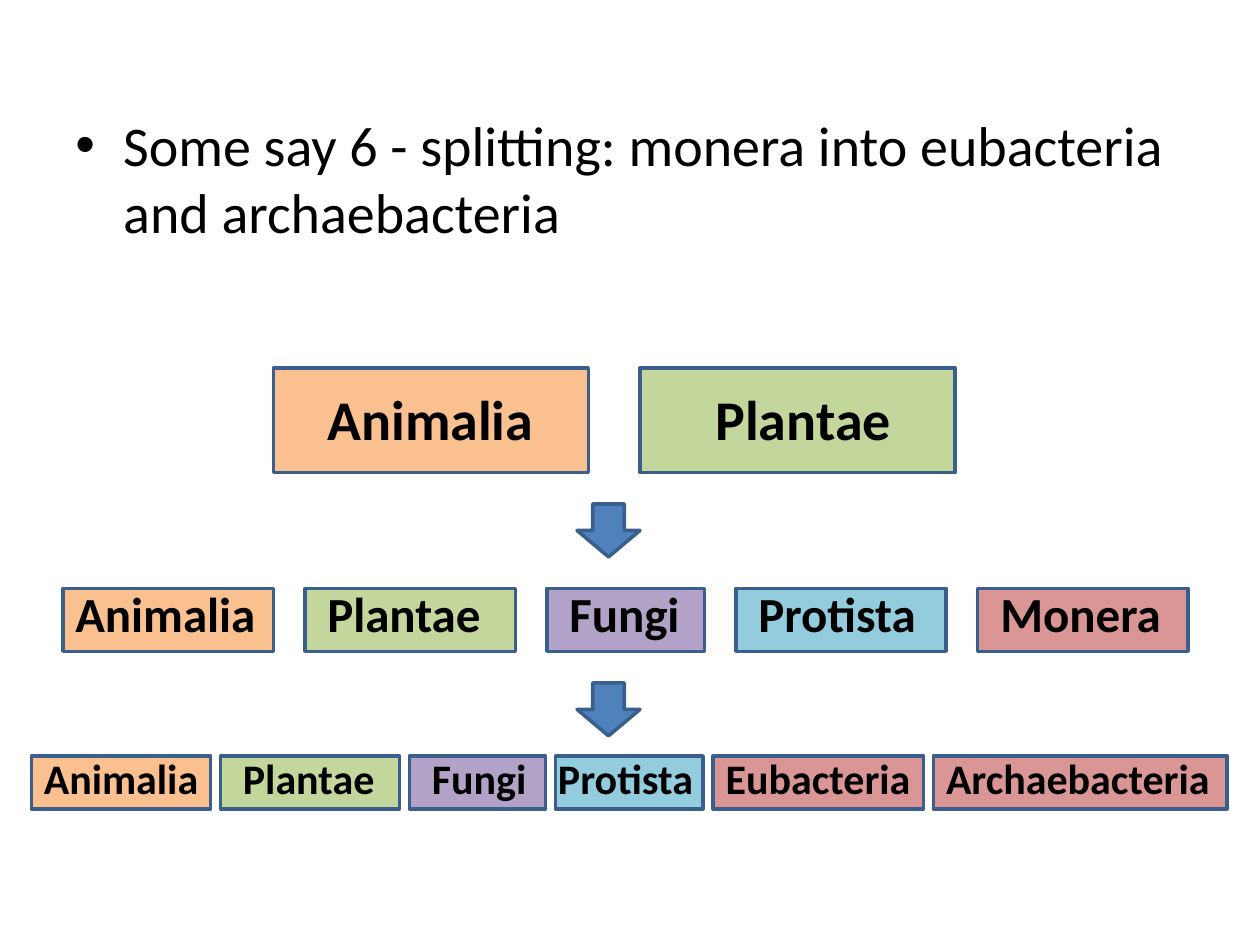
from lxml.etree import SubElement
from pptx import Presentation
from pptx.dml.color import RGBColor
from pptx.enum.shapes import MSO_SHAPE
from pptx.oxml.ns import qn
from pptx.util import Inches, Pt

STATEMENT = "Some say 6 - splitting: monera into eubacteria and archaebacteria"
ORANGE, GREEN, PURPLE = "FAC090", "C3D69B", "B3A2C7"
CYAN, RED, BLUE, OUTLINE = "93CDDD", "D99694", "4F81BD", "3A5F8C"

# Each kingdom: name, fill, box width, label indent, label width
SYSTEMS = [
    dict(left=2.17, top=2.92, height=0.83, gap=0.41, size=32,
         label_top=3, label_height=0.64, kingdoms=[
             ("Animalia", ORANGE, 2.5, 0.33, 1.85),
             ("Plantae", GREEN, 2.5, 0.5, 1.61)]),
    dict(left=0.5, top=4.67, height=0.5, gap=0.25, size=28,
         label_top=4.58, label_height=0.57, kingdoms=[
             ("Animalia", ORANGE, 1.67, 0, 1.67),
             ("Plantae", GREEN, 1.67, 0.08, 1.43),
             ("Fungi", PURPLE, 1.25, 0.08, 1.09),
             ("Protista", CYAN, 1.67, 0.08, 1.47),
             ("Monera", RED, 1.67, 0.08, 1.49)]),
    dict(left=0.25, top=6, height=0.42, gap=0.08, size=24,
         label_top=5.92, label_height=0.5, kingdoms=[
             ("Animalia", ORANGE, 1.42, 0, 1.44),
             ("Plantae", GREEN, 1.42, 0.08, 1.26),
             ("Fungi", PURPLE, 1.08, 0.08, 0.96),
             ("Protista", CYAN, 1.17, -0.08, 1.29),
             ("Eubacteria", RED, 1.67, 0, 1.69),
             ("Archaebacteria", RED, 2.33, 0, 2.32)]),
]
ARROW_TOPS = [4, 5.42]


def color(value):
    return RGBColor.from_string(value)


def add_text(slide, text, left, top, width, height, size, bold=False, wrap=False):
    box = slide.shapes.add_textbox(Inches(left), Inches(top), Inches(width), Inches(height))
    box.text_frame.word_wrap = wrap
    paragraph = box.text_frame.paragraphs[0]
    run = paragraph.add_run()
    run.text = text
    run.font.name = "Calibri"
    run.font.size = Pt(size)
    run.font.bold = bold
    run.font.color.rgb = color("000000")
    return paragraph


def add_bullet(paragraph, indent):
    properties = paragraph._p.get_or_add_pPr()
    properties.set("marL", str(Inches(indent)))
    properties.set("indent", str(-Inches(indent)))
    SubElement(properties, qn("a:buFont"), typeface="Arial")
    SubElement(properties, qn("a:buChar"), char="•")


def add_block(slide, kind, left, top, width, height, fill):
    shape = slide.shapes.add_shape(kind, Inches(left), Inches(top), Inches(width), Inches(height))
    shape.shadow.inherit = False
    shape.fill.solid()
    shape.fill.fore_color.rgb = color(fill)
    shape.line.color.rgb = color(OUTLINE)
    shape.line.width = Pt(2)


def add_system(slide, system):
    left = system["left"]
    for name, fill, width, indent, label_width in system["kingdoms"]:
        add_block(slide, MSO_SHAPE.RECTANGLE, left, system["top"], width, system["height"], fill)
        add_text(slide, name, left + indent, system["label_top"], label_width,
                 system["label_height"], system["size"], bold=True)
        left += width + system["gap"]


def main():
    presentation = Presentation()
    presentation.slide_width = Inches(10)
    presentation.slide_height = Inches(7.5)
    slide = presentation.slides.add_slide(presentation.slide_layouts[6])

    statement = add_text(slide, STATEMENT, 0.5, 0.83, 9, 5.87, 32, wrap=True)
    statement.space_before = Pt(6.4)
    add_bullet(statement, 0.38)

    for system in SYSTEMS:
        add_system(slide, system)
    for top in ARROW_TOPS:
        add_block(slide, MSO_SHAPE.DOWN_ARROW, 4.58, top, 0.5, 0.42, BLUE)

    presentation.save("out.pptx")


if __name__ == "__main__":
    main()
